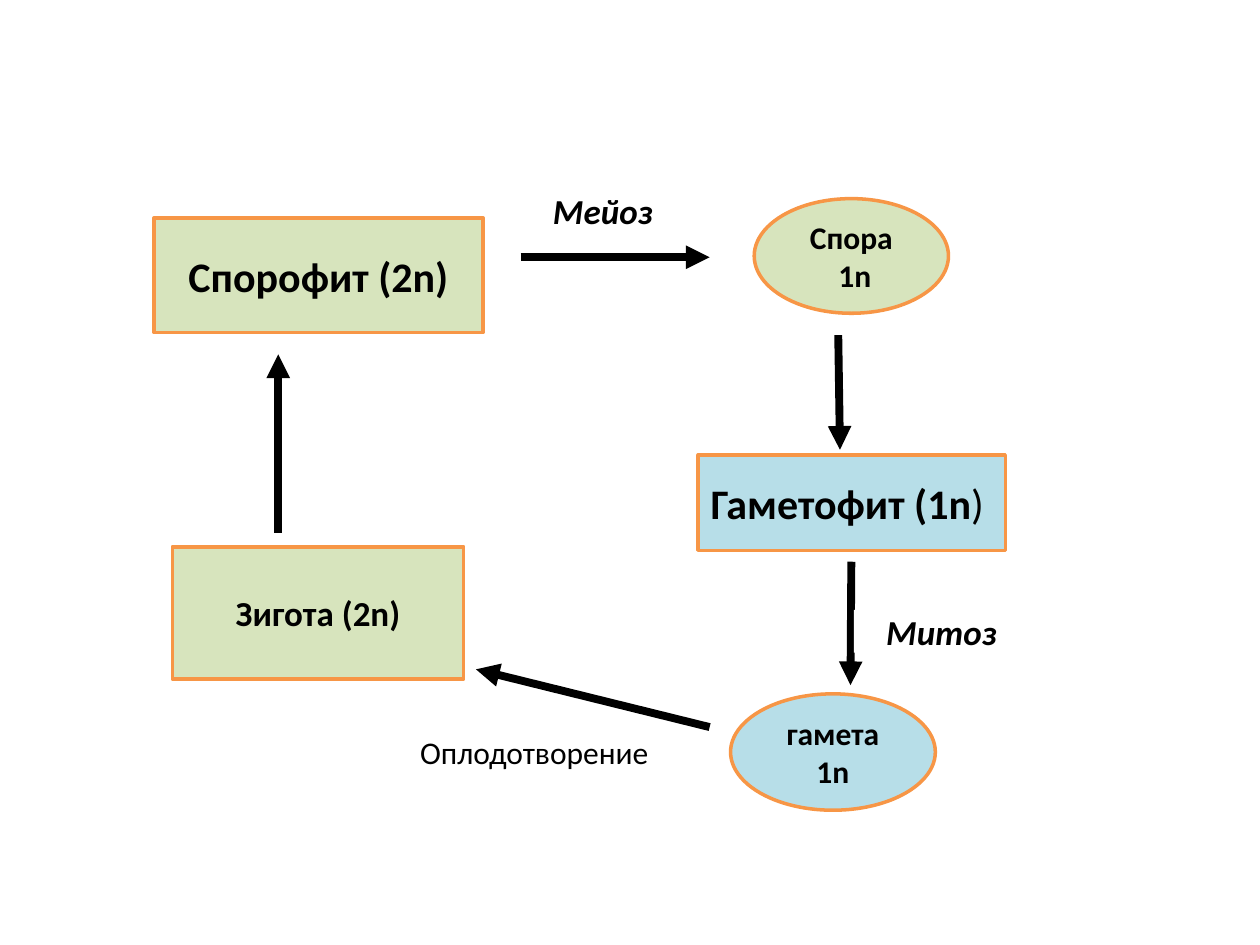
from lxml.etree import SubElement
from pptx import Presentation
from pptx.dml.color import RGBColor
from pptx.enum.shapes import MSO_CONNECTOR, MSO_SHAPE
from pptx.enum.text import MSO_ANCHOR, PP_ALIGN
from pptx.oxml.ns import qn
from pptx.util import Pt

COLORS = {
    "green": "D7E4BD",
    "blue": "B7DEE8",
    "orange": "F79646",
    "black": "000000",
    "white": "FFFFFF",
}


def color(name):
    return RGBColor.from_string(COLORS[name])


def add_text(sp, text, size=18, bold=False, italic=False, align=PP_ALIGN.CENTER, right=7.2):
    tf = sp.text_frame
    tf.word_wrap = True
    tf.vertical_anchor = MSO_ANCHOR.MIDDLE
    tf.margin_right = Pt(right)
    for i, line in enumerate(text.split("\n")):
        p = tf.paragraphs[0] if i == 0 else tf.add_paragraph()
        p.alignment = align
        r = p.add_run()
        r.text = line
        r.font.name = "Calibri"
        r.font.size = Pt(size)
        r.font.bold = bold
        r.font.italic = italic
        r.font.color.rgb = color("black")
    return tf


prs = Presentation()
prs.slide_width, prs.slide_height = Pt(720), Pt(540)
s = prs.slides.add_slide(prs.slide_layouts[6])

RECT, OVAL = MSO_SHAPE.RECTANGLE, MSO_SHAPE.OVAL
LEFT, CENTER = PP_ALIGN.LEFT, PP_ALIGN.CENTER

stages = [
    (RECT, "Спорофит (2n)", 24, "green", CENTER, (88, 124.5, 188, 65.5)),
    (RECT, "Гаметофит (1n", 24, "blue", LEFT, (399, 260, 175.5, 54.5)),
    (RECT, "Зигота (2n)", 20, "green", CENTER, (98.5, 312.5, 166.5, 75.5)),
    (OVAL, "Спора\n 1n", 18, "green", CENTER, (431, 113.5, 111, 65.5)),
    (OVAL, "гамета 1n", 18, "blue", CENTER, (417.5, 396.5, 117, 66.5)),
]
for shape, text, size, fill, align, box in stages:
    sp = s.shapes.add_shape(shape, *map(Pt, box))
    sp.shadow.inherit = False
    sp.fill.solid()
    sp.fill.fore_color.rgb = color(fill)
    sp.line.color.rgb = color("orange")
    sp.line.width = Pt(2)
    tf = add_text(sp, text, size=size, bold=True, align=align)
    if text.startswith("Гаметофит"):
        r = tf.paragraphs[0].add_run()
        r.text = ")"
        r.font.name = "Calibri"
        r.font.size = Pt(size)
        r.font.bold = False
        r.font.color.rgb = color("black")

arrows = [
    (297.5, 147, 405.5, 147),
    (479, 191.5, 480, 257),
    (486.5, 321, 486, 391.5),
    (405.5, 415.5, 272, 382.5),
    (159, 304.5, 159, 202.5),
]
for ends in arrows:
    arrow = s.shapes.add_connector(MSO_CONNECTOR.STRAIGHT, *map(Pt, ends))
    arrow.line.color.rgb = color("black")
    arrow.line.width = Pt(4.5)
    SubElement(arrow.line._get_or_add_ln(), qn("a:tailEnd"), type="triangle")
    SubElement(arrow._element.spPr, qn("a:effectLst"))

processes = [
    ("Мейоз", 20, True, 12, (293, 108, 108, 24.5)),
    ("Митоз", 20, True, 15, (488, 348.5, 108, 24.5)),
    ("Оплодотворение", 18, False, 20, (231, 417.5, 161.5, 24.5)),
]
for text, size, emphasis, right, box in processes:
    sp = s.shapes.add_shape(RECT, *map(Pt, box))
    sp.shadow.inherit = False
    sp.fill.solid()
    sp.fill.fore_color.rgb = color("white")
    sp.line.fill.background()
    add_text(sp, text, size=size, bold=emphasis, italic=emphasis, right=right)

prs.save("out.pptx")
